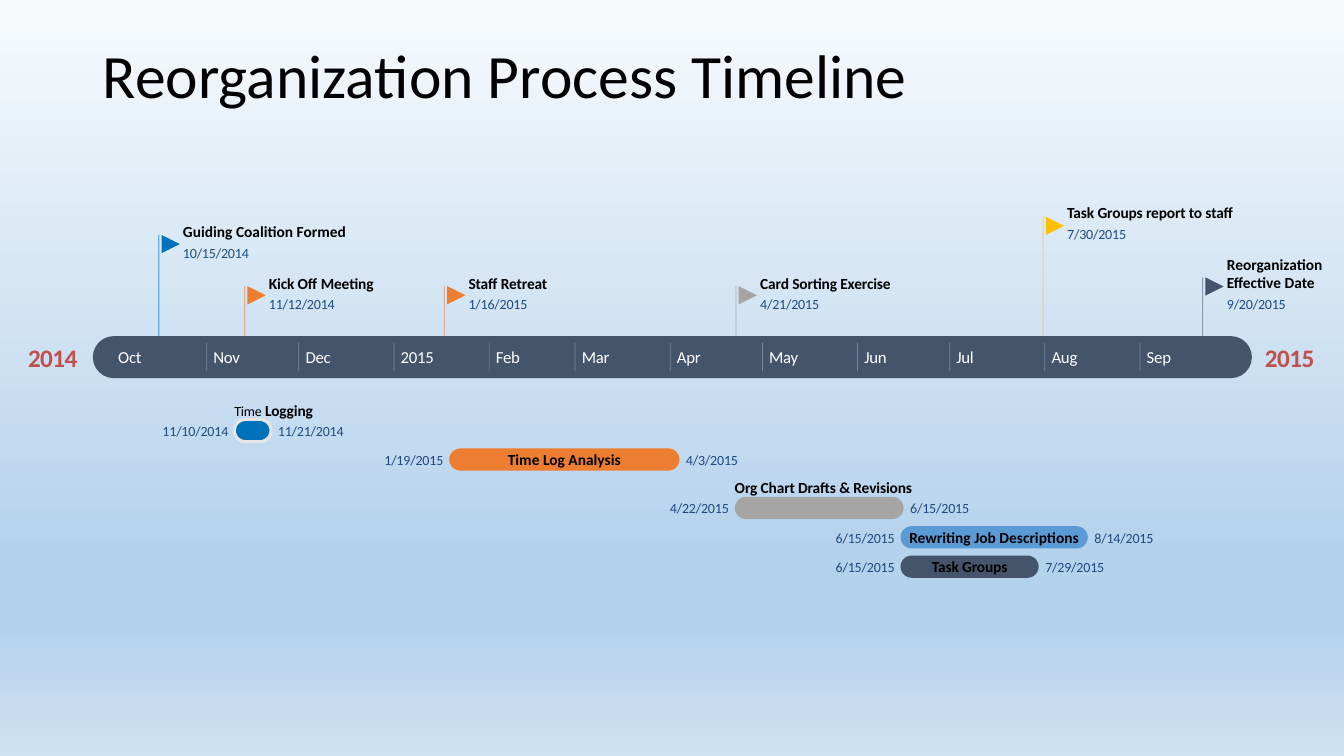
import pptx
import pptx.dml.color
import pptx.enum.dml
import pptx.enum.shapes
import pptx.enum.text
import pptx.oxml.ns
import pptx.util
from lxml import etree

Cm, Pt = pptx.util.Cm, pptx.util.Pt
RGBColor = pptx.dml.color.RGBColor
SHAPE = pptx.enum.shapes.MSO_SHAPE
ALIGN = pptx.enum.text.PP_ALIGN
ANCHOR = pptx.enum.text.MSO_ANCHOR
qn = pptx.oxml.ns.qn

BLACK = RGBColor(0x00, 0x00, 0x00)
WHITE = RGBColor(0xFF, 0xFF, 0xFF)
SLATE = RGBColor(0x44, 0x54, 0x6A)
BLUE = RGBColor(0x00, 0x72, 0xBC)
SKY = RGBColor(0x5B, 0x9B, 0xD5)
ORANGE = RGBColor(0xED, 0x7D, 0x31)
GOLD = RGBColor(0xFF, 0xC0, 0x00)
GREY = RGBColor(0xA5, 0xA5, 0xA5)
PALE = RGBColor(0xE7, 0xE6, 0xE6)
RED = RGBColor(0xC0, 0x50, 0x4D)
NAVY = RGBColor(0x1F, 0x49, 0x7E)
STEEL = RGBColor(0x1F, 0x4E, 0x79)
SKY_STOPS = [(0, RGBColor(0xF7, 0xFA, 0xFD)), (74, RGBColor(0xB5, 0xD2, 0xEC)),
             (83, RGBColor(0xB5, 0xD2, 0xEC)), (100, RGBColor(0xCE, 0xE1, 0xF2))]

MONTHS = [("Oct", 31), ("Nov", 30), ("Dec", 31), ("2015", 31), ("Feb", 28), ("Mar", 31),
          ("Apr", 30), ("May", 31), ("Jun", 30), ("Jul", 31), ("Aug", 31), ("Sep", 30)]
FIRST_DAY_X = 2.81
DAY = (28.73 - FIRST_DAY_X) / 335
BAND_TOP, BAND_HEIGHT = 8.47, 1.06
FLAG_SIZE, BAR_HEIGHT = 0.46, 0.56
DATE_HEIGHT, LABEL_HEIGHT = 0.43, 0.48
SLACK = 0.25
STEEL_DATES = {"10/15/2014", "11/10/2014"}

# title, title width, lines, tracking, date, flag top, date top, colour
MILESTONES = [
    ("Guiding Coalition Formed", 4.11, 1, 0, "10/15/2014", 5.92, 6.15, BLUE),
    ("Kick Off Meeting", 2.69, 1, -0.1, "11/12/2014", 7.21, 7.44, ORANGE),
    ("Staff Retreat", 2.06, 1, -0.1, "1/16/2015", 7.21, 7.44, ORANGE),
    ("Card Sorting Exercise", 3.38, 1, -0.1, "4/21/2015", 7.21, 7.44, GREY),
    ("Task Groups report to staff", 4.27, 1, -0.1, "7/30/2015", 5.46, 5.67, GOLD),
    ("Reorganization Effective Date", 2.51, 2, 0, "9/20/2015", 6.99, 7.44, SLATE),
]
# label spans, label width, label above the bar, tracking, start, end, bar top, fill, outline
TASKS = [
    ([("Time", 10, False), (" Logging", 11, True)], 2.16, True, -0.1,
     "11/10/2014", "11/21/2014", 10.57, BLUE, PALE),
    ([("Time Log Analysis", 11, True)], 2.84, False, 0,
     "1/19/2015", "4/3/2015", 11.3, ORANGE, None),
    ([("Org Chart Drafts & Revisions", 11, True)], 4.6, True, -0.1,
     "4/22/2015", "6/15/2015", 12.52, GREY, None),
    ([("Rewriting Job Descriptions", 11, True)], 4.27, False, 0,
     "6/15/2015", "8/14/2015", 13.26, SKY, None),
    ([("Task Groups", 11, True)], 3.38, False, -0.1,
     "6/15/2015", "7/29/2015", 14, SLATE, None),
]


def month_x(index):
    return FIRST_DAY_X + DAY * sum(days for _, days in MONTHS[:index])


def date_x(date):
    """Left edge of a month/day/year date on the time scale, in cm."""
    month, day, _ = map(int, date.split("/"))
    return month_x((month - 10) % 12) + DAY * (day - 1)


class TimelinePage:
    font = "Calibri"

    def __init__(self, page):
        self.page = page

    def background(self, stops):
        fill = self.page.background.fill
        fill.gradient()
        fill.gradient_angle = 270
        stop_list = self.page._element.find(".//" + qn("a:gsLst"))
        for stop in list(stop_list):
            stop_list.remove(stop)
        for position, color in stops:
            stop = etree.SubElement(stop_list, qn("a:gs"), pos=str(position * 1000))
            etree.SubElement(stop, qn("a:srgbClr"), val=str(color))

    def text(self, left, top, width, height, spans, color, align=ALIGN.LEFT,
             tracking=0, wrap=False):
        """Margin-free text box, with slack on one line; each span is (words, size, bold)."""
        if not wrap:
            left -= SLACK / 2 if align == ALIGN.CENTER else 0
            width += SLACK
        box = self.page.shapes.add_textbox(Cm(left), Cm(top), Cm(width), Cm(height))
        frame = box.text_frame
        frame.margin_left = frame.margin_right = frame.margin_top = frame.margin_bottom = 0
        frame.vertical_anchor = ANCHOR.MIDDLE
        frame.word_wrap = True
        para = frame.paragraphs[0]
        para.alignment = align
        for words, size, bold in spans:
            span = para.add_run()
            span.text = words
            span.font.name = self.font
            span.font.size = Pt(size)
            span.font.bold = bold
            span.font.color.rgb = color
            if tracking:
                span._r.get_or_add_rPr().set("spc", str(round(tracking * 100)))
        return box

    def date(self, left, top, date, align=ALIGN.LEFT, ends_at_left=False):
        width = 0.18 * len(date) - 0.06
        color = STEEL if date in STEEL_DATES else NAVY
        self.text(left - width if ends_at_left else left, top, width, DATE_HEIGHT,
                  [(date, 10, False)], color, align, -0.1)

    def upright(self, x, top, bottom, color, weight, opacity):
        """Translucent vertical line."""
        line = self.page.shapes.add_connector(
            pptx.enum.shapes.MSO_CONNECTOR.STRAIGHT, Cm(x), Cm(top), Cm(x), Cm(bottom))
        line.line.color.rgb = color
        line.line.width = Pt(weight)
        shade = line._element.spPr.find(".//" + qn("a:srgbClr"))
        etree.SubElement(shade, qn("a:alpha"), val=str(opacity * 1000))
        etree.SubElement(line._element.spPr, qn("a:effectLst"))

    def shape(self, kind, left, top, width, height, color, outline=None):
        shape = self.page.shapes.add_shape(kind, Cm(left), Cm(top), Cm(width), Cm(height))
        shape.shadow.inherit = False
        shape.fill.solid()
        shape.fill.fore_color.rgb = color
        if outline is None:
            shape.line.fill.background()
        else:
            shape.line.color.rgb = outline
            shape.line.width = Pt(2.25)
        return shape

    def pill(self, *arguments):
        self.shape(SHAPE.ROUNDED_RECTANGLE, *arguments).adjustments[0] = 0.5

    def band(self):
        self.pill(2.34, BAND_TOP, 29.21, BAND_HEIGHT, SLATE)
        for index, (name, _) in enumerate(MONTHS):
            x = month_x(index)
            if index:
                self.upright(x, 8.64, 9.35, WHITE, 0.5, 30)
            self.text(x + 0.17, 8.74, 0.8, 0.5, [(name, 12, False)], WHITE, tracking=-0.2)

    def milestone(self, title, width, lines, tracking, date, flag_top, date_top, color):
        pole = date_x(date) + DAY / 2 + 0.07
        self.upright(pole, flag_top, BAND_TOP, color, 0.75, 50)
        height = LABEL_HEIGHT * lines
        self.text(pole + 0.61, date_top - 0.07 - height, width, height,
                  [(title, 11, True)], BLACK, tracking=tracking, wrap=lines > 1)
        self.date(pole + 0.61, date_top, date)
        flag = self.shape(SHAPE.FLOWCHART_MERGE, pole + 0.07, flag_top,
                          FLAG_SIZE, FLAG_SIZE, color)
        flag.rotation = 270

    def task(self, spans, width, above, tracking, start, end, top, color, outline):
        left, right = date_x(start), date_x(end) + DAY
        self.pill(left, top, right - left, BAR_HEIGHT, color, outline)
        self.date(left - 0.11, top + 0.07, start, ALIGN.CENTER, ends_at_left=True)
        self.date(right + 0.13, top + 0.07, end, ALIGN.CENTER)
        if above:
            self.text(left, top - LABEL_HEIGHT, width, LABEL_HEIGHT, spans, BLACK,
                      tracking=tracking)
        else:
            self.text((left + right - width) / 2, top + 0.04, width, LABEL_HEIGHT, spans,
                      BLACK, ALIGN.CENTER, tracking)

    def title(self, words):
        box = self.text(2.34, 1.02, 29.21, 3.68, [(words, 44, False)], BLACK, wrap=True)
        frame = box.text_frame
        frame.vertical_anchor = ANCHOR.TOP
        frame.margin_left = frame.margin_right = Cm(0.25)
        frame.margin_top = frame.margin_bottom = Cm(0.13)
        frame.paragraphs[0].line_spacing = 0.9


def main():
    deck = pptx.Presentation()
    deck.slide_width, deck.slide_height = Cm(33.87), Cm(19.05)
    timeline = TimelinePage(deck.slides.add_slide(deck.slide_layouts[6]))
    timeline.background(SKY_STOPS)
    for year, left in [("2014", 0.71), ("2015", 31.88)]:
        timeline.text(left, 8.61, 1.24, 0.79, [(year, 18, True)], RED, ALIGN.CENTER, -0.4)
    for milestone in MILESTONES:
        timeline.milestone(*milestone)
    timeline.band()
    for task in TASKS:
        timeline.task(*task)
    timeline.title("Reorganization Process Timeline")
    deck.save("out.pptx")


if __name__ == "__main__":
    main()
